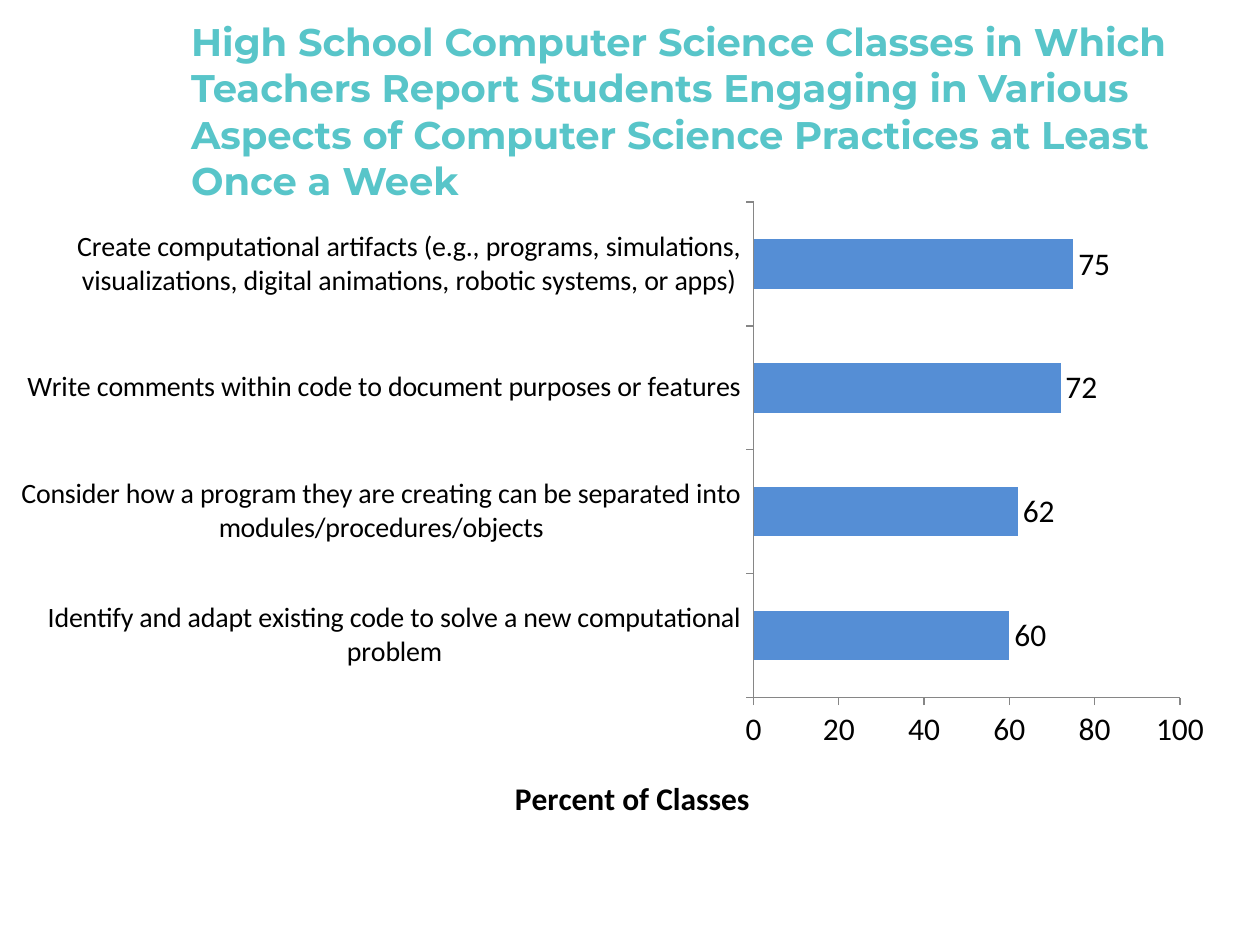
from lxml import etree
from pptx import Presentation
from pptx.chart.data import CategoryChartData
from pptx.dml.color import RGBColor
from pptx.enum.chart import XL_CHART_TYPE, XL_LABEL_POSITION, XL_TICK_MARK
from pptx.enum.text import MSO_ANCHOR, MSO_AUTO_SIZE, PP_ALIGN
from pptx.oxml.ns import qn
from pptx.util import Cm, Pt

BAR = XL_CHART_TYPE.BAR_CLUSTERED
OUTSIDE_END = XL_LABEL_POSITION.OUTSIDE_END
TICK_OUT = XL_TICK_MARK.OUTSIDE
MIDDLE = MSO_ANCHOR.MIDDLE
NO_FIT = MSO_AUTO_SIZE.NONE
LEFT = PP_ALIGN.LEFT

COLORS = {"title": "58C5C9", "text": "000000", "bar": "558ED5", "axis": "868686"}
FONTS = {"title": "Montserrat", "chart": "Calibri"}
TITLE_ONLY = 5

TITLE = ("High School Computer Science Classes in Which Teachers Report Students "
         "Engaging in Various Aspects of Computer Science Practices at Least Once a Week")
PERCENT_BY_PRACTICE = {
    "Identify and adapt existing code to solve a new computational problem": 60,
    "Consider how a program they are creating can be separated into "
    "modules/procedures/objects": 62,
    "Write comments within code to document purposes or features": 72,
    "Create computational artifacts (e.g., programs, simulations, visualizations, "
    "digital animations, robotic systems, or apps)": 75,
}


def set_all(target, values):
    for name, value in values.items():
        setattr(target, name, value)


def set_layout(parent, index, values):
    """Give a chart part a manual layout in fractions of the chart."""
    for old in parent.findall(qn("c:layout")):
        parent.remove(old)
    layout = etree.Element(qn("c:layout"))
    manual = etree.SubElement(layout, qn("c:manualLayout"))
    for tag, value in values.items():
        etree.SubElement(manual, qn(f"c:{tag}")).set("val", str(value))
    parent.insert(index, layout)


class SlideBuilder:
    def __init__(self, deck):
        self.slide = deck.slides.add_slide(deck.slide_layouts[TITLE_ONLY])

    def style_font(self, font, family, size, color, bold=False):
        set_all(font, {"name": FONTS[family], "size": Pt(size), "bold": bold})
        font.color.rgb = RGBColor.from_string(COLORS[color])

    def title(self, text, left, top, width, height):
        box = self.slide.shapes.title
        set_all(box, {"left": Cm(left), "top": Cm(top),
                      "width": Cm(width), "height": Cm(height)})
        frame = box.text_frame
        set_all(frame, {"text": text, "word_wrap": True,
                        "auto_size": NO_FIT, "vertical_anchor": MIDDLE})
        para = frame.paragraphs[0]
        para.alignment = LEFT
        self.style_font(para.runs[0].font, "title", 22, "title", bold=True)

    def bar_chart(self, values, axis_text, left, top, width, height):
        data = CategoryChartData()
        data.categories = list(values)
        data.add_series("Series 1", list(values.values()))
        chart = self.slide.shapes.add_chart(
            BAR, Cm(left), Cm(top), Cm(width), Cm(height), data).chart
        set_all(chart, {"has_legend": False, "has_title": False})
        self.style_font(chart.font, "chart", 18, "text")

        # Bars and value labels
        plot = chart.plots[0]
        set_all(plot, {"gap_width": 150, "vary_by_categories": False,
                       "has_data_labels": True})
        set_all(plot.data_labels, {"show_value": True, "position": OUTSIDE_END})
        fill = plot.series[0].format.fill
        fill.solid()
        fill.fore_color.rgb = RGBColor.from_string(COLORS["bar"])

        # Axes
        for axis, size in ((chart.category_axis, 16), (chart.value_axis, 18)):
            set_all(axis, {"has_major_gridlines": False, "major_tick_mark": TICK_OUT})
            axis.format.line.width = Pt(0.75)
            axis.format.line.color.rgb = RGBColor.from_string(COLORS["axis"])
            self.style_font(axis.tick_labels.font, "chart", size, "text")
        set_all(chart.value_axis, {"minimum_scale": 0, "maximum_scale": 100,
                                   "major_unit": 20})
        axis_title = chart.value_axis.axis_title
        axis_title.text_frame.text = axis_text
        span = axis_title.text_frame.paragraphs[0].runs[0]
        self.style_font(span.font, "chart", 18, "text", bold=True)

        # Room for the long category labels, title centred under the chart
        set_layout(chart._chartSpace.chart.plotArea, 0, {
            "layoutTarget": "inner", "xMode": "edge", "yMode": "edge",
            "x": 0.606, "y": 0.02, "w": 0.354, "h": 0.761})
        set_layout(axis_title._element, 1, {
            "xMode": "edge", "yMode": "edge", "x": 0.403, "y": 0.894})


def main():
    deck = Presentation()
    set_all(deck, {"slide_width": Cm(25.4), "slide_height": Cm(19.05)})
    builder = SlideBuilder(deck)
    builder.bar_chart(PERCENT_BY_PRACTICE, "Percent of Classes", 0.43, 3.81, 24.33, 13.13)
    builder.title(TITLE, 3.6, 0.64, 20.52, 3.18)
    deck.save("out.pptx")


if __name__ == "__main__":
    main()
